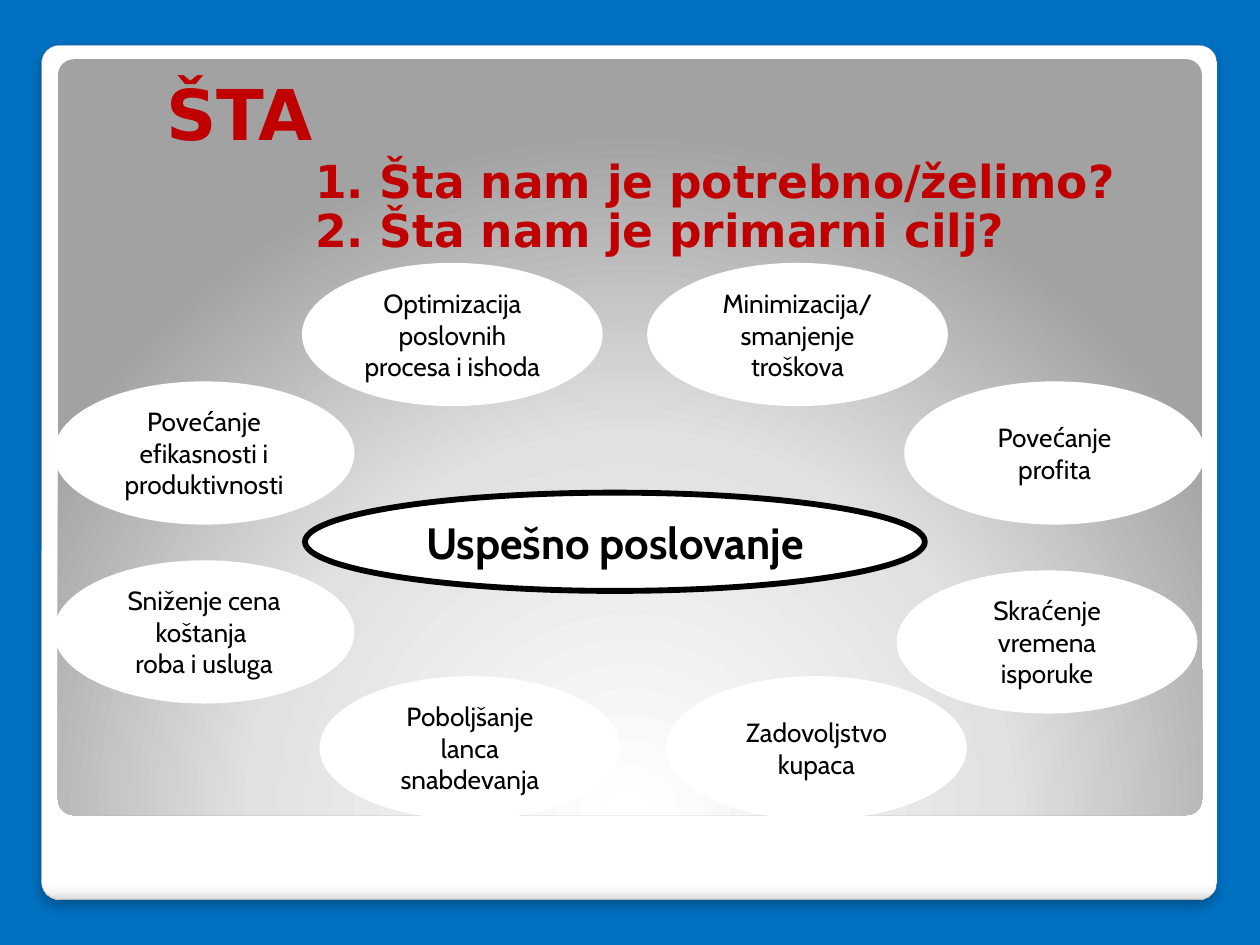
from lxml.etree import SubElement
from pptx import Presentation
from pptx.dml.color import RGBColor
from pptx.enum.shapes import MSO_SHAPE
from pptx.enum.text import MSO_ANCHOR, MSO_AUTO_SIZE, PP_ALIGN
from pptx.oxml import parse_xml
from pptx.oxml.ns import nsdecls, qn
from pptx.util import Inches, Pt

COLORS = {"background": "0070C0", "white": "FFFFFF", "black": "000000",
          "heading": "C00000", "frame_line": "A4A4A4"}
HEADING_FONT, BODY_FONT = "DejaVu Sans", "Cabin"
LINEAR = '<a:lin ang="5400000" scaled="0"/>'
RADIAL = ('<a:path path="circle"><a:fillToRect l="50000" t="175000" '
          'r="50000" b="-75000"/></a:path>')


def add_text(paragraph, text, size, color="black", font=BODY_FONT, bold=False):
    run = paragraph.add_run()
    run.text = text
    run.font.size, run.font.name, run.font.bold = Pt(size), font, bold
    run.font.color.rgb = RGBColor.from_string(COLORS[color])


def add_panel(shapes, box, stops, direction):
    panel = shapes.add_shape(MSO_SHAPE.ROUNDED_RECTANGLE, *map(Inches, box))
    panel.adjustments[0] = 0.021
    panel.shadow.inherit = False
    panel.line.fill.background()
    stop_xml = "".join(f'<a:gs pos="{share * 1000}"><a:srgbClr val="{color}"/></a:gs>'
                       for share, color in stops)
    gradient = parse_xml(f'<a:gradFill {nsdecls("a")} rotWithShape="1">'
                         f'<a:gsLst>{stop_xml}</a:gsLst>{direction}</a:gradFill>')
    panel._element.spPr.find(qn("a:prstGeom")).addnext(gradient)
    return panel


prs = Presentation()
prs.slide_width, prs.slide_height = Inches(10), Inches(7.5)
slide = prs.slides.add_slide(prs.slide_layouts[5])
slide.background.fill.solid()
slide.background.fill.fore_color.rgb = RGBColor.from_string(COLORS["background"])

# White frame with a soft shadow, and the grey panel on it
frame = add_panel(slide.shapes, (0.33, 0.36, 9.33, 6.78),
                  [(0, "FFFFFF"), (98, "FFFFFF"), (99, "F7F7F7"), (100, "DADADA")], LINEAR)
frame.line.color.rgb = RGBColor.from_string(COLORS["frame_line"])
frame.line.width = Pt(0.16)
shadow = SubElement(frame._element.spPr.find(qn("a:effectLst")), qn("a:outerShdw"),
                    blurRad=str(Pt(6)), dist=str(Pt(4)), dir="5400000", rotWithShape="0")
shadow_color = SubElement(shadow, qn("a:srgbClr"), val=COLORS["black"])
SubElement(shadow_color, qn("a:alpha"), val="25000")
add_panel(slide.shapes, (0.46, 0.47, 9.08, 6),
          [(0, "FFFFFF"), (55, "E1E1E1"), (100, "A2A2A2")], RADIAL)

# Title, brought in front of the panels
title = slide.shapes.title
slide.shapes._spTree.append(title._element)
title.left, title.top, title.width, title.height = map(Inches, (1.22, 0.55, 8.33, 1.48))
heading = title.text_frame
heading.word_wrap, heading.auto_size = True, MSO_AUTO_SIZE.NONE
heading.vertical_anchor = MSO_ANCHOR.MIDDLE
first, second = heading.paragraphs[0], heading.add_paragraph()
for paragraph, indent in ((first, -1.18), (second, 0)):
    paragraph.alignment, paragraph.line_spacing = PP_ALIGN.LEFT, 0.9
    paragraph._p.get_or_add_pPr().set("marL", str(Inches(1.18)))
    paragraph._p.get_or_add_pPr().set("indent", str(Inches(indent)))
red_bold = {"color": "heading", "bold": True}
add_text(first, "ŠTA", 40, font=HEADING_FONT, **red_bold)
add_text(first, " ", 48, **red_bold)
first.add_line_break()
add_text(first, "1. Šta nam je potrebno/želimo?", 26, font=HEADING_FONT, **red_bold)
add_text(second, "2. Šta nam je primarni cilj?", 26, font=HEADING_FONT, **red_bold)

# Central goal and the ring of goals around it: left, top, text
GOAL_SIZE = (2.34, 1.09)
goals = [
    (2.42, 2.11, "Optimizacija poslovnih procesa i ishoda"),
    (5.16, 2.11, "Minimizacija/ smanjenje troškova"),
    (7.14, 4.55, "Skraćenje vremena isporuke"),
    (0.45, 4.47, "Sniženje cena koštanja \vroba i usluga"),
    (5.31, 5.39, "Zadovoljstvo kupaca"),
    (2.56, 5.39, "Poboljšanje lanca snabdevanja"),
    (0.45, 3.05, "Povećanje efikasnosti i produktivnosti"),
    (7.20, 3.05, "Povećanje profita"),
]
ovals = [(2.42, 3.91, "Uspešno poslovanje", (4.92, 0.78), "black", 25, True)]
ovals += [(*goal, GOAL_SIZE, "white", 15, False) for goal in goals]
for left, top, text, size, outline, points, bold in ovals:
    oval = slide.shapes.add_shape(MSO_SHAPE.OVAL, *map(Inches, (left, top, *size)))
    oval.shadow.inherit = False
    oval.fill.solid()
    oval.fill.fore_color.rgb = RGBColor.from_string(COLORS["white"])
    oval.line.color.rgb = RGBColor.from_string(COLORS[outline])
    oval.line.width = Pt(3.35)
    oval.text_frame.word_wrap = True
    oval.text_frame.vertical_anchor = MSO_ANCHOR.MIDDLE
    label = oval.text_frame.paragraphs[0]
    label.alignment = PP_ALIGN.CENTER
    for number, part in enumerate(text.split("\v")):
        if number:
            label.add_line_break()
        add_text(label, part, points, bold=bold)

prs.save("out.pptx")
